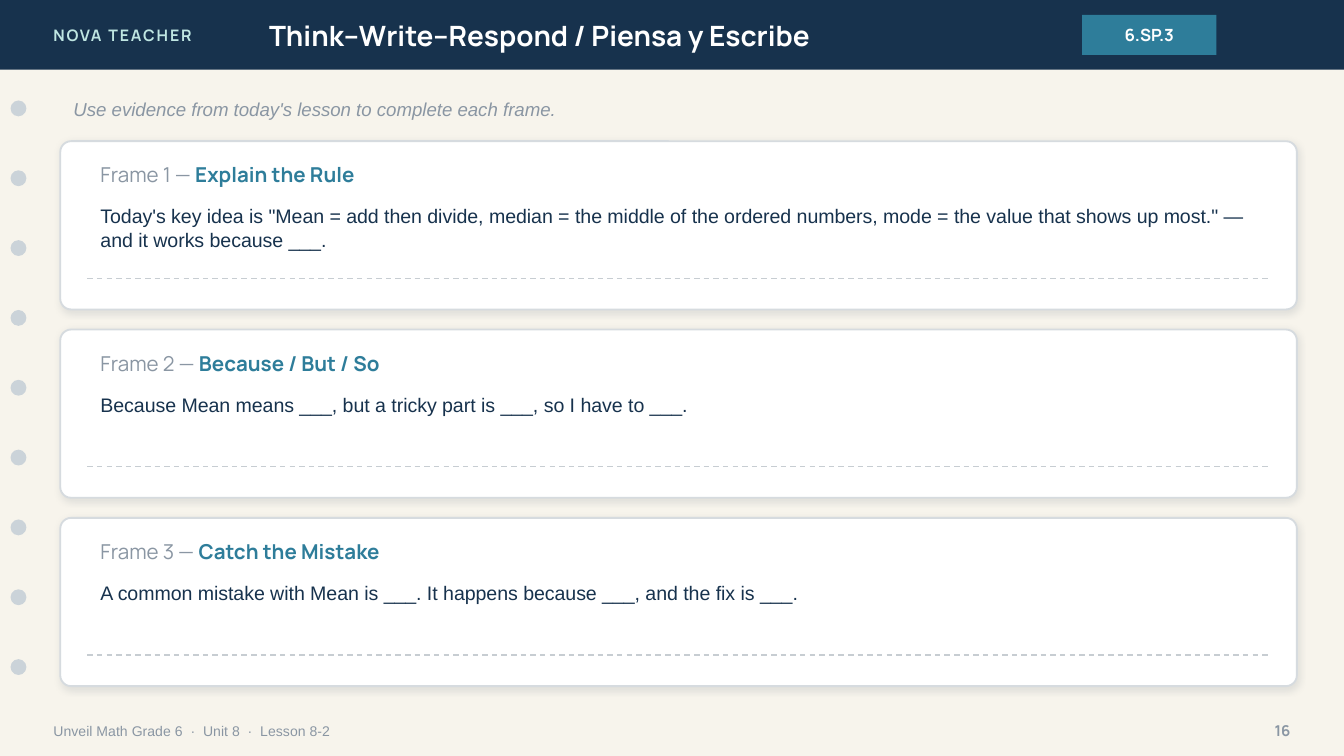
from lxml.etree import SubElement
from pptx import Presentation
from pptx.dml.color import RGBColor
from pptx.enum.dml import MSO_LINE
from pptx.enum.shapes import MSO_CONNECTOR, MSO_SHAPE
from pptx.enum.text import MSO_ANCHOR, MSO_AUTO_SIZE, PP_ALIGN
from pptx.oxml.ns import qn
from pptx.util import Cm, Pt

FRAMES = [
    ("Explain the Rule",
     "Today's key idea is \"Mean = add then divide, median = the middle of the ordered "
     "numbers, mode = the value that shows up most.\" — and it works because ___."),
    ("Because / But / So",
     "Because Mean means ___, but a tricky part is ___, so I have to ___."),
    ("Catch the Mistake",
     "A common mistake with Mean is ___. It happens because ___, and the fix is ___."),
]
TITLE = "Think–Write–Respond / Piensa y Escribe"
BRAND = "NOVA TEACHER"
CODE = "6.SP.3"
HINT = "Use evidence from today's lesson to complete each frame."
FOOT = "Unveil Math Grade 6  ·  Unit 8  ·  Lesson 8-2"
PAGE = "16"

NAVY, TEAL, GREY, WHITE = "17324D", "2E7D9A", "8A96A3", "FFFFFF"
STYLES = {
    "brand": ("BFE6E2", {"name": "Manrope", "size": Pt(8.5), "bold": True}),
    "title": (WHITE, {"name": "Manrope", "size": Pt(15), "bold": True}),
    "code": (WHITE, {"name": "Manrope", "size": Pt(9), "bold": True}),
    "foot": (GREY, {"name": "Arial", "size": Pt(7.5)}),
    "page": (GREY, {"name": "Manrope", "size": Pt(8), "bold": True}),
    "hint": (GREY, {"name": "Arial", "size": Pt(10), "italic": True}),
    "label": (GREY, {"name": "Manrope", "size": Pt(11), "bold": False}),
    "head": (TEAL, {"name": "Manrope", "size": Pt(11), "bold": True}),
    "body": (NAVY, {"name": "Arial", "size": Pt(10.5)}),
}
BAR = 1.32
DOTS, STEP = 9, 1.32
LEFT, TOP, WIDE, HIGH, PITCH = 1.14, 2.67, 23.37, 3.18, 3.56
INNER, SPAN = 1.65, 22.35


def paint(color, code):
    color.rgb = RGBColor.from_string(code)


def fill(shape, code):
    shape.fill.solid()
    paint(shape.fill.fore_color, code)


def write(shape, runs, align=PP_ALIGN.LEFT, anchor=MSO_ANCHOR.MIDDLE):
    frame = shape.text_frame
    form = {"word_wrap": True, "auto_size": MSO_AUTO_SIZE.NONE, "vertical_anchor": anchor}
    for key, value in form.items():
        setattr(frame, key, value)
    para = frame.paragraphs[0]
    para.alignment = align
    for text, style in runs:
        run = para.add_run()
        run.text = text
        code, form = STYLES[style]
        for key, value in form.items():
            setattr(run.font, key, value)
        paint(run.font.color, code)
    return para


def label(box, runs, **form):
    return write(shapes.add_textbox(*map(Cm, box)), runs, **form)


def block(kind, box, code):
    shape = shapes.add_shape(kind, *map(Cm, box))
    shape.shadow.inherit = False
    fill(shape, code)
    shape.line.fill.background()
    return shape


def shade(shape):
    effects = shape._element.spPr.find(qn("a:effectLst"))
    outer = SubElement(effects, qn("a:outerShdw"), blurRad=str(Pt(4)), dist=str(Pt(1)),
                       dir="5400000", algn="bl", rotWithShape="0")
    tint = SubElement(outer, qn("a:srgbClr"), val="1C2E42")
    SubElement(tint, qn("a:alpha"), val="10000")


def card(index, head, body):
    top = TOP + index * PITCH
    panel = block(MSO_SHAPE.ROUNDED_RECTANGLE, (LEFT, top, WIDE, HIGH), WHITE)
    panel.adjustments[0] = 0.064
    paint(panel.line.color, "D6DBDF")
    panel.line.width = Pt(1)
    shade(panel)
    label((INNER, top + 0.25, SPAN, 0.76),
          [(f"Frame {index + 1} — ", "label"), (head, "head")])
    label((INNER, top + 1.07, SPAN, 1.02), [(body, "body")], anchor=MSO_ANCHOR.TOP)
    ends = (INNER, top + 2.59, INNER + SPAN, top + 2.59)
    rule = shapes.add_connector(MSO_CONNECTOR.STRAIGHT, *map(Cm, ends))
    paint(rule.line.color, "C7CDD2")
    rule.line.width = Pt(0.75)
    rule.line.dash_style = MSO_LINE.DASH
    SubElement(rule._element.spPr, qn("a:effectLst"))


deck = Presentation()
deck.slide_width, deck.slide_height = Cm(25.4), Cm(14.29)
slide = deck.slides.add_slide(deck.slide_layouts[5])
shapes = slide.shapes
fill(slide.background, "F7F4EC")

block(MSO_SHAPE.RECTANGLE, (0, 0, 25.4, BAR), NAVY)
brand = label((0.76, 0, 6.1, BAR), [(BRAND, "brand")])
brand.runs[0].font._element.set("spc", "100")

title = shapes.title
for key, value in zip(("left", "top", "width", "height"), (4.83, 0, 14.22, BAR)):
    setattr(title, key, Cm(value))
write(title, [(TITLE, "title")])
shapes._spTree.append(title._element)

badge = block(MSO_SHAPE.RECTANGLE, (20.45, 0.28, 2.54, 0.76), TEAL)
write(badge, [(CODE, "code")], align=PP_ALIGN.CENTER)

for index in range(DOTS):
    block(MSO_SHAPE.OVAL, (0.2, 1.9 + index * STEP, 0.3, 0.3), "CBD3D9")

label((0.76, 13.46, 17.78, 0.71), [(FOOT, "foot")])
label((23.37, 13.46, 1.27, 0.71), [(PAGE, "page")], align=PP_ALIGN.RIGHT)
label((LEFT, 1.68, WIDE, 0.76), [(HINT, "hint")])

for index, (head, body) in enumerate(FRAMES):
    card(index, head, body)

deck.save("out.pptx")
